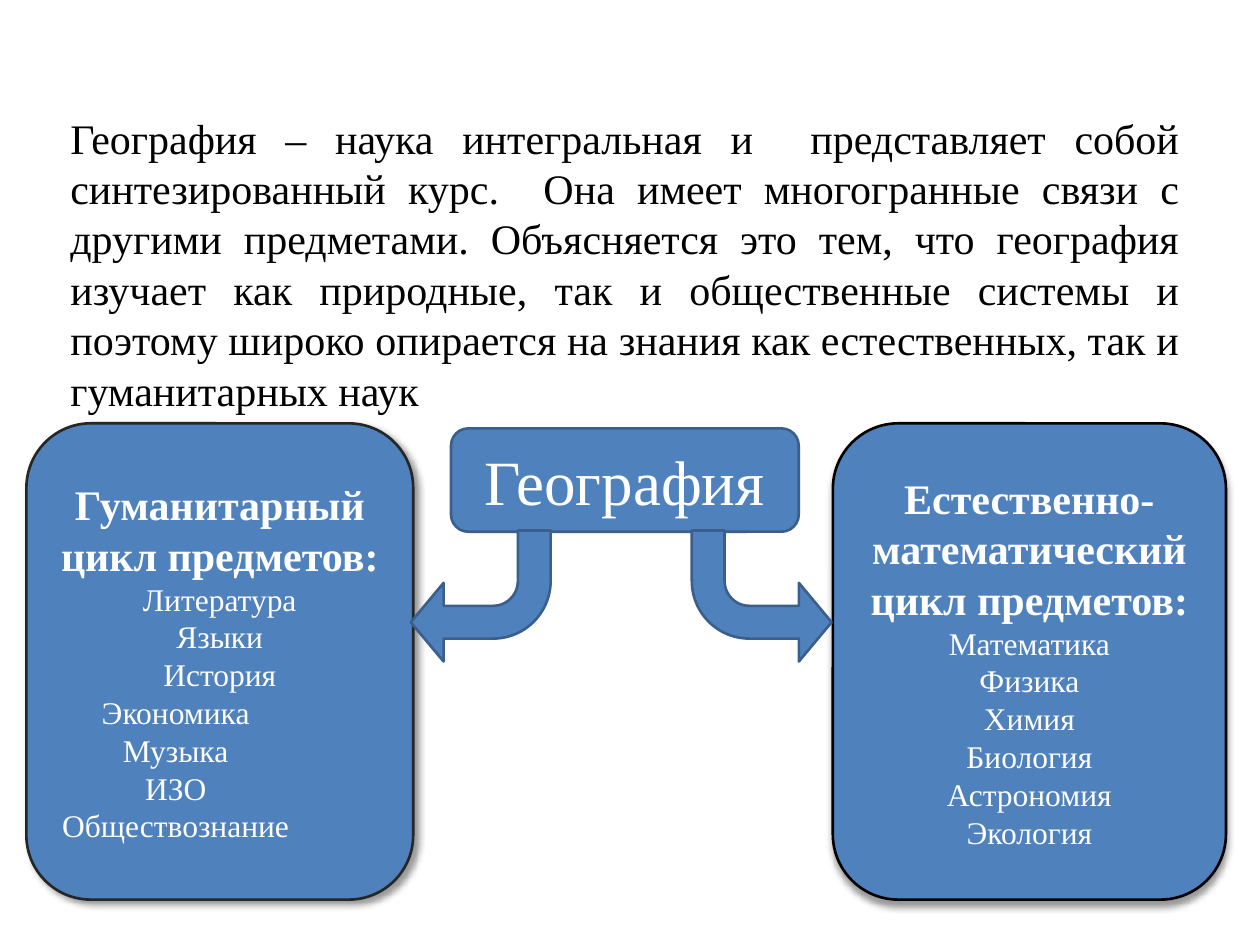
from lxml.etree import SubElement
from pptx import Presentation
from pptx.dml.color import RGBColor
from pptx.enum.shapes import MSO_SHAPE as Shape
from pptx.enum.text import MSO_ANCHOR as Anchor, PP_ALIGN as Align
from pptx.oxml.ns import qn
from pptx.util import Inches, Pt

COLORS = {"blue": "4F81BD", "edge": "3A5F8C", "dark": "262626",
          "black": "000000", "white": "FFFFFF"}
INTRO = {"size": Pt(24), "name": "Times New Roman", "bold": False}
CENTER = {**INTRO, "size": Pt(36)}
HEADING = {**INTRO, "bold": True}
SUBJECT = {**INTRO, "size": Pt(18)}


def add_block(kind, box, edge):
    block = slide.shapes.add_shape(kind, *map(Inches, box))
    block.shadow.inherit = False
    block.fill.solid()
    block.fill.fore_color.rgb = RGBColor.from_string(COLORS["blue"])
    block.line.color.rgb = RGBColor.from_string(COLORS[edge])
    block.line.width = Pt(1.5)
    return block


def write(frame, lines, color, align, anchor):
    frame.word_wrap = True
    frame.vertical_anchor = anchor
    for index, (text, style) in enumerate(lines):
        paragraph = frame.paragraphs[0] if index == 0 else frame.add_paragraph()
        paragraph.alignment = align
        run = paragraph.add_run()
        run.text = text
        run.font.color.rgb = RGBColor.from_string(COLORS[color])
        for key, value in style.items():
            setattr(run.font, key, value)


prs = Presentation()
prs.slide_width, prs.slide_height = Inches(10), Inches(7.5)
slide = prs.slides.add_slide(prs.slide_layouts[6])

intro = slide.shapes.add_textbox(*map(Inches, (0.46, 0.84, 9, 1.88)))
intro_text = (
    "География – наука интегральная и  представляет собой синтезированный курс.  "
    "Она имеет многогранные связи с другими предметами. Объясняется это тем, что "
    "география изучает как природные, так и общественные системы и поэтому широко "
    "опирается на знания как естественных, так и гуманитарных наук"
)
write(intro.text_frame, [(intro_text, INTRO)], "black", Align.JUSTIFY, Anchor.TOP)

geography = add_block(Shape.ROUNDED_RECTANGLE, (3.58, 3.4, 2.76, 0.82), "edge")
write(geography.text_frame, [("География", CENTER)], "white", Align.CENTER, Anchor.MIDDLE)

cycles = [
    (0.21, 3.07, "dark", 45, "Гуманитарный цикл предметов:",
     ["Литература", "Языки", "История", "Экономика", "Музыка", "ИЗО", "Обществознание"]),
    (6.61, 3.12, "black", 90, "Естественно-математический цикл предметов:",
     ["Математика", "Физика", "Химия", "Биология", "Астрономия", "Экология"]),
]
for left, width, edge, angle, heading, subjects in cycles:
    cycle = add_block(Shape.ROUNDED_RECTANGLE, (left, 3.36, width, 3.78), edge)
    effects = cycle._element.spPr.find(qn("a:effectLst"))
    shadow = SubElement(effects, qn("a:outerShdw"), blurRad=str(Pt(4)), dist=str(Pt(3)),
                        dir=str(angle * 60000), rotWithShape="0")
    tint = SubElement(shadow, qn("a:srgbClr"), val=COLORS["black"])
    SubElement(tint, qn("a:alpha"), val="40000")
    lines = [(heading, HEADING)] + [(subject, SUBJECT) for subject in subjects]
    write(cycle.text_frame, lines, "white", Align.CENTER, Anchor.MIDDLE)
    for paragraph in cycle.text_frame.paragraphs:
        if paragraph.text == "Экономика":
            paragraph._p.get_or_add_pPr().set("marR", str(Inches(0.7)))

for left, mirrored in ((3.26, False), (5.49, True)):
    arrow = add_block(Shape.BENT_ARROW, (left, 4.21, 1.11, 1.04), "edge")
    arrow.rotation = 180
    for index, value in enumerate((0.25, 0.3, 0.25, 0.44)):
        arrow.adjustments[index] = value
    if mirrored:
        arrow._element.spPr.find(qn("a:xfrm")).set("flipH", "1")

prs.save("out.pptx")
